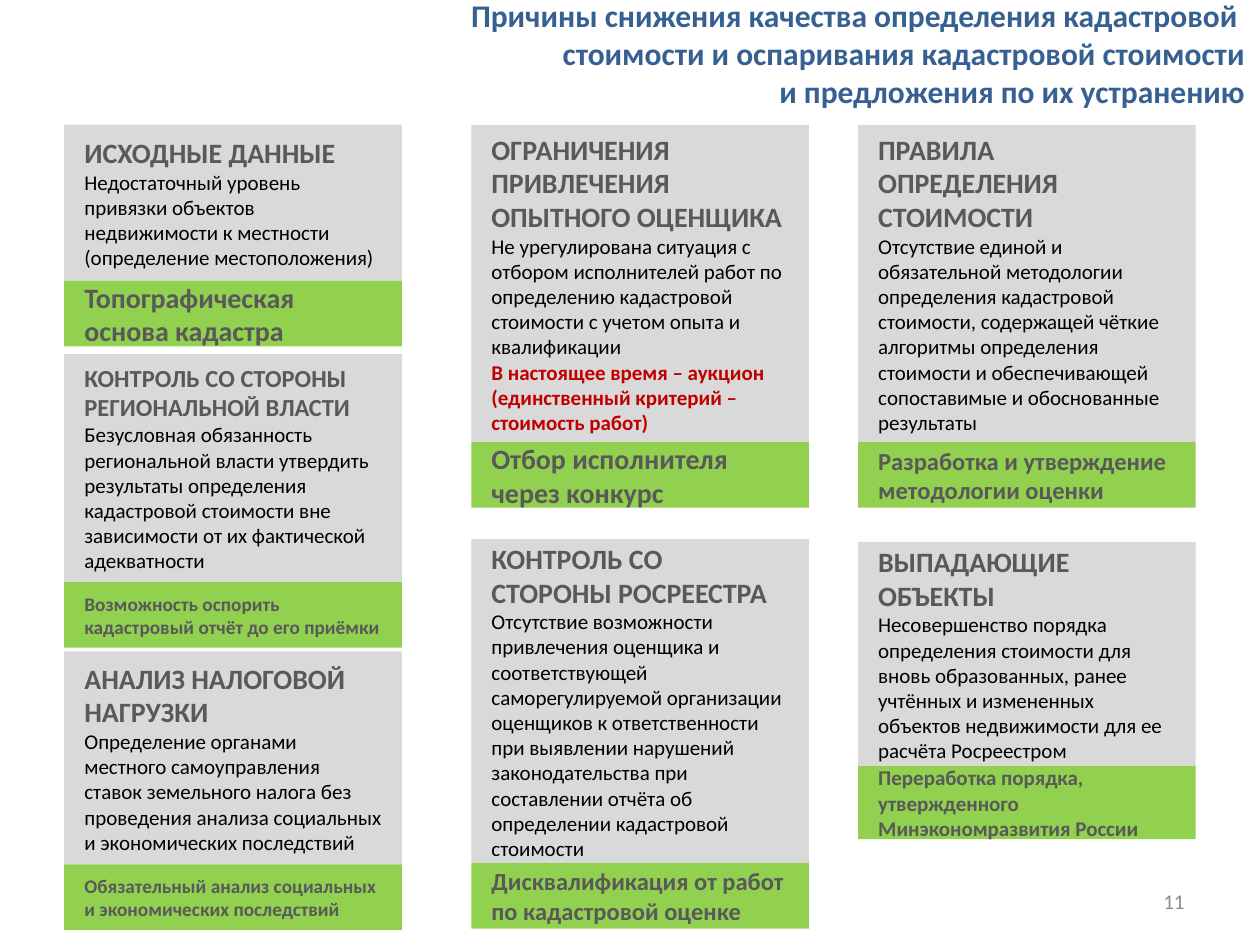
"""Build the slide on causes of poor cadastral valuation and their remedies."""
from pptx import Presentation
from pptx.dml.color import RGBColor
from pptx.enum.shapes import MSO_SHAPE
from pptx.enum.text import MSO_ANCHOR, PP_ALIGN
from pptx.util import Inches, Pt

RECT = MSO_SHAPE.RECTANGLE
MID = MSO_ANCHOR.MIDDLE
LEFT, RIGHT = PP_ALIGN.LEFT, PP_ALIGN.RIGHT
BLUE = RGBColor(0x37, 0x60, 0x92)
GREY = RGBColor(0xD9, 0xD9, 0xD9)
GREEN = RGBColor(0x92, 0xD0, 0x50)
DARK = RGBColor(0x59, 0x59, 0x59)
BLACK = RGBColor(0, 0, 0)
RED = RGBColor(0xC0, 0, 0)
PALE = RGBColor(0x8C, 0x8C, 0x8C)

COLS = (0.51, 3.74, 6.81)
WIDE = 2.68
BAR = 0.52

deck = Presentation()
deck.slide_width, deck.slide_height = Inches(10), Inches(7.5)
slide = deck.slides.add_slide(deck.slide_layouts[6])


def write(shape, lines, align):
    frame = shape.text_frame
    frame.word_wrap = True
    frame.vertical_anchor = MID
    frame.text = "\n".join(line[0] for line in lines)
    for para, (_, size, color, bold) in zip(frame.paragraphs, lines):
        para.alignment = align
        font = para.runs[0].font
        font.name, font.size, font.bold = "Calibri", Pt(size), bold
        font.color.rgb = color


def block(left, top, high, fill, lines):
    box = slide.shapes.add_shape(
        RECT, Inches(left), Inches(top), Inches(WIDE), Inches(high))
    box.shadow.inherit = False
    box.fill.solid()
    box.fill.fore_color.rgb = fill
    box.line.fill.background()
    frame = box.text_frame
    frame.margin_left = frame.margin_right = Inches(0.16)
    write(box, lines, LEFT)


title = slide.shapes.add_textbox(Inches(2.09), 0, Inches(7.89), Inches(0.84))
write(title, [(line, 18, BLUE, True) for line in (
    "Причины снижения качества определения кадастровой ",
    "стоимости и оспаривания кадастровой стоимости",
    "и предложения по их устранению")], RIGHT)

# column, top, card height, bar height, head, head size, body, alert, remedy, remedy size
cards = [
    (0, 0.99, 1.24, BAR, "ИСХОДНЫЕ ДАННЫЕ", 16,
     "Недостаточный уровень привязки объектов недвижимости к местности "
     "(определение местоположения)", "",
     "Топографическая основа кадастра", 16),
    (0, 2.81, 1.81, BAR, "КОНТРОЛЬ СО СТОРОНЫ РЕГИОНАЛЬНОЙ ВЛАСТИ", 14,
     "Безусловная обязанность региональной власти утвердить результаты "
     "определения кадастровой стоимости вне зависимости от их фактической "
     "адекватности", "",
     "Возможность оспорить кадастровый отчёт до его приёмки", 11),
    (0, 5.17, 1.69, BAR, "АНАЛИЗ НАЛОГОВОЙ НАГРУЗКИ", 16,
     "Определение органами местного самоуправления ставок земельного налога "
     "без проведения анализа социальных и экономических последствий", "",
     "Обязательный анализ социальных и экономических последствий", 11),
    (1, 0.99, 2.52, BAR, "ОГРАНИЧЕНИЯ ПРИВЛЕЧЕНИЯ ОПЫТНОГО ОЦЕНЩИКА", 16,
     "Не урегулирована ситуация с отбором исполнителей работ по определению "
     "кадастровой стоимости с учетом опыта и квалификации",
     "В настоящее время – аукцион (единственный критерий – стоимость работ)",
     "Отбор исполнителя через конкурс", 16),
    (1, 4.28, 2.57, BAR, "КОНТРОЛЬ СО СТОРОНЫ РОСРЕЕСТРА", 16,
     "Отсутствие возможности привлечения оценщика и соответствующей "
     "саморегулируемой организации оценщиков к ответственности при выявлении "
     "нарушений законодательства при составлении отчёта об определении "
     "кадастровой стоимости", "",
     "Дисквалификация от работ по кадастровой оценке", 14),
    (2, 0.99, 2.52, BAR, "ПРАВИЛА ОПРЕДЕЛЕНИЯ СТОИМОСТИ", 16,
     "Отсутствие единой и обязательной методологии определения кадастровой "
     "стоимости, содержащей чёткие алгоритмы определения стоимости и "
     "обеспечивающей сопоставимые и обоснованные результаты", "",
     "Разработка и утверждение методологии оценки", 14),
    (2, 4.3, 1.78, 0.58, "ВЫПАДАЮЩИЕ ОБЪЕКТЫ", 16,
     "Несовершенство порядка определения стоимости для вновь образованных, "
     "ранее учтённых и измененных объектов недвижимости для ее расчёта "
     "Росреестром", "",
     "Переработка порядка, утвержденного Минэкономразвития России", 12),
]

for col, top, high, bar, head, big, body, alert, cure, size in cards:
    lines = [(head, big, DARK, True), (body, 12, BLACK, False)]
    if alert:
        lines.append((alert, 12, RED, True))
    block(COLS[col], top, high, GREY, lines)
    block(COLS[col], top + high, bar, GREEN, [(cure, size, DARK, True)])

page = slide.shapes.add_textbox(
    Inches(7.17), Inches(6.95), Inches(2.33), Inches(0.4))
write(page, [("11", 12, PALE, False)], RIGHT)

deck.save("out.pptx")
